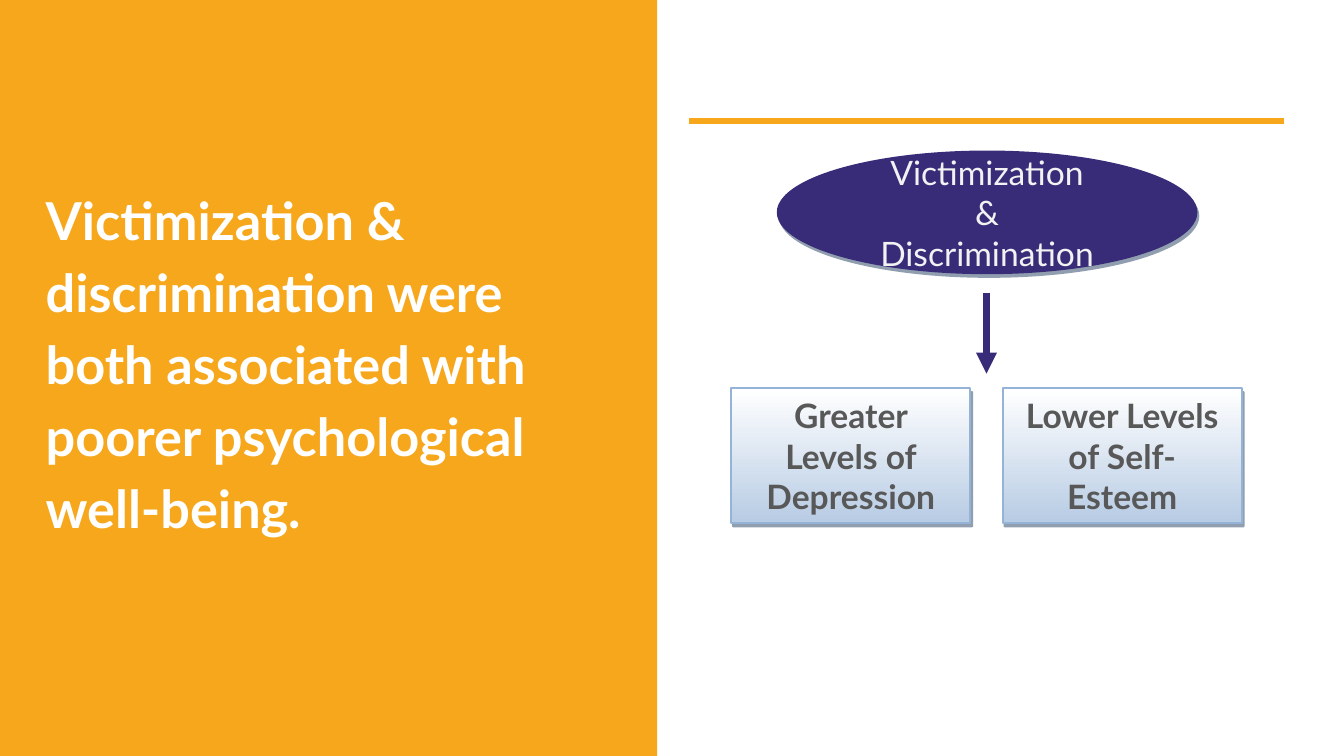
from lxml.etree import SubElement
from pptx import Presentation
from pptx.dml.color import RGBColor
from pptx.enum.shapes import MSO_CONNECTOR, MSO_SHAPE
from pptx.enum.text import MSO_ANCHOR, MSO_AUTO_SIZE, PP_ALIGN
from pptx.oxml.ns import qn
from pptx.util import Inches, Pt

FONT = "Lato"
COLORS = {
    "orange": "F6A71B",
    "purple": "382C79",
    "white": "FFFFFF",
    "pale": "F2F2F2",
    "gray": "585858",
    "light_blue": "B8CCE4",
    "border_blue": "95B3D7",
    "shadow": "243F60",
}


def color(name):
    """Return the palette colour with the given name."""
    return RGBColor.from_string(COLORS[name])


def add_run(paragraph, text, size, color_name, bold=False):
    """Add one formatted run to a paragraph."""
    run = paragraph.add_run()
    run.text = text
    run.font.name = FONT
    run.font.size = Pt(size)
    run.font.bold = bold
    run.font.color.rgb = color(color_name)


def add_shadow(shape):
    """Give a shape a hard, half-transparent shadow at its lower right."""
    effects = SubElement(shape.element.spPr, qn("a:effectLst"))
    shadow = SubElement(effects, qn("a:outerShdw"), blurRad="0",
                        dist=str(Pt(2.2)), dir=str(63 * 60000), algn="ctr", rotWithShape="0")
    shade = SubElement(shadow, qn("a:srgbClr"), val=COLORS["shadow"])
    SubElement(shade, qn("a:alpha"), val="50000")


def add_panel(slide, width, height):
    """Add the solid panel on the left side."""
    panel = slide.shapes.add_shape(MSO_SHAPE.RECTANGLE, 0, 0, width, height)
    panel.shadow.inherit = False
    panel.fill.solid()
    panel.fill.fore_color.rgb = color("orange")
    panel.line.fill.background()


def add_statement(slide, text):
    """Place the statement in the title placeholder, in front of the panel."""
    title = slide.shapes.title
    slide.shapes.element.append(title.element)
    title.left, title.top = Inches(0.24), Inches(1.23)
    title.width, title.height = Inches(4.42), Inches(3.84)
    frame = title.text_frame
    frame.word_wrap = True
    frame.auto_size = MSO_AUTO_SIZE.NONE
    frame.vertical_anchor = MSO_ANCHOR.TOP
    frame.margin_left = frame.margin_right = Inches(0.1)
    frame.margin_top = frame.margin_bottom = Inches(0.1)
    paragraph = frame.paragraphs[0]
    paragraph.alignment = PP_ALIGN.LEFT
    paragraph.line_spacing = 1.15
    paragraph.space_before = Pt(0)
    paragraph.space_after = Pt(16)
    add_run(paragraph, text, 28, "white", bold=True)


def add_line(slide, start, end, color_name, width, arrow=False):
    """Add a straight line, with an arrowhead at its end if wanted."""
    line = slide.shapes.add_connector(
        MSO_CONNECTOR.STRAIGHT, *map(Inches, start + end))
    line.line.color.rgb = color(color_name)
    line.line.width = Pt(width)
    if arrow:
        outline = line.element.spPr.find(qn("a:ln"))
        SubElement(outline, qn("a:tailEnd"), type="triangle")
    SubElement(line.element.spPr, qn("a:effectLst"))


def add_node(slide, kind, box, lines, color_name, bold=False):
    """Add a diagram node with centred lines of text."""
    node = slide.shapes.add_shape(kind, *map(Inches, box))
    frame = node.text_frame
    frame.word_wrap = True
    frame.vertical_anchor = MSO_ANCHOR.MIDDLE
    for index, text in enumerate(lines):
        paragraph = frame.add_paragraph() if index else frame.paragraphs[0]
        paragraph.alignment = PP_ALIGN.CENTER
        add_run(paragraph, text, 18, color_name, bold)
    return node


def add_cause(slide, box, lines):
    """Add the dark ellipse that names the cause."""
    cause = add_node(slide, MSO_SHAPE.OVAL, box, lines, "pale")
    cause.fill.solid()
    cause.fill.fore_color.rgb = color("purple")
    cause.line.fill.background()
    add_shadow(cause)


def add_outcome(slide, box, text):
    """Add a gradient box that names an outcome."""
    outcome = add_node(slide, MSO_SHAPE.RECTANGLE, box, [text], "gray", bold=True)
    outcome.fill.gradient()
    outcome.fill.gradient_angle = 270
    for stop, name in zip(outcome.fill.gradient_stops, ("white", "light_blue")):
        stop.color.rgb = color(name)
    outcome.line.color.rgb = color("border_blue")
    outcome.line.width = Pt(1)
    add_shadow(outcome)


def main():
    """Build the slide and save it."""
    presentation = Presentation()
    presentation.slide_width = Inches(10)
    presentation.slide_height = Inches(10) * 9 // 16
    slide = presentation.slides.add_slide(presentation.slide_layouts[5])
    add_panel(slide, Inches(4.89), presentation.slide_height)
    add_line(slide, (5.13, 0.9), (9.55, 0.9), "orange", 3)
    add_statement(slide, "Victimization & discrimination were both associated "
                         "with poorer psychological well-being.")
    add_cause(slide, (5.78, 1.12, 3.13, 0.92),
              ["Victimization", "&", "Discrimination"])
    add_line(slide, (7.34, 2.18), (7.34, 2.78), "purple", 3.75, arrow=True)
    outcomes = ["Greater Levels of Depression", "Lower Levels of Self-Esteem"]
    for index, text in enumerate(outcomes):
        add_outcome(slide, (5.44 + index * 2.02, 2.89, 1.78, 1), text)
    presentation.save("out.pptx")


if __name__ == "__main__":
    main()
